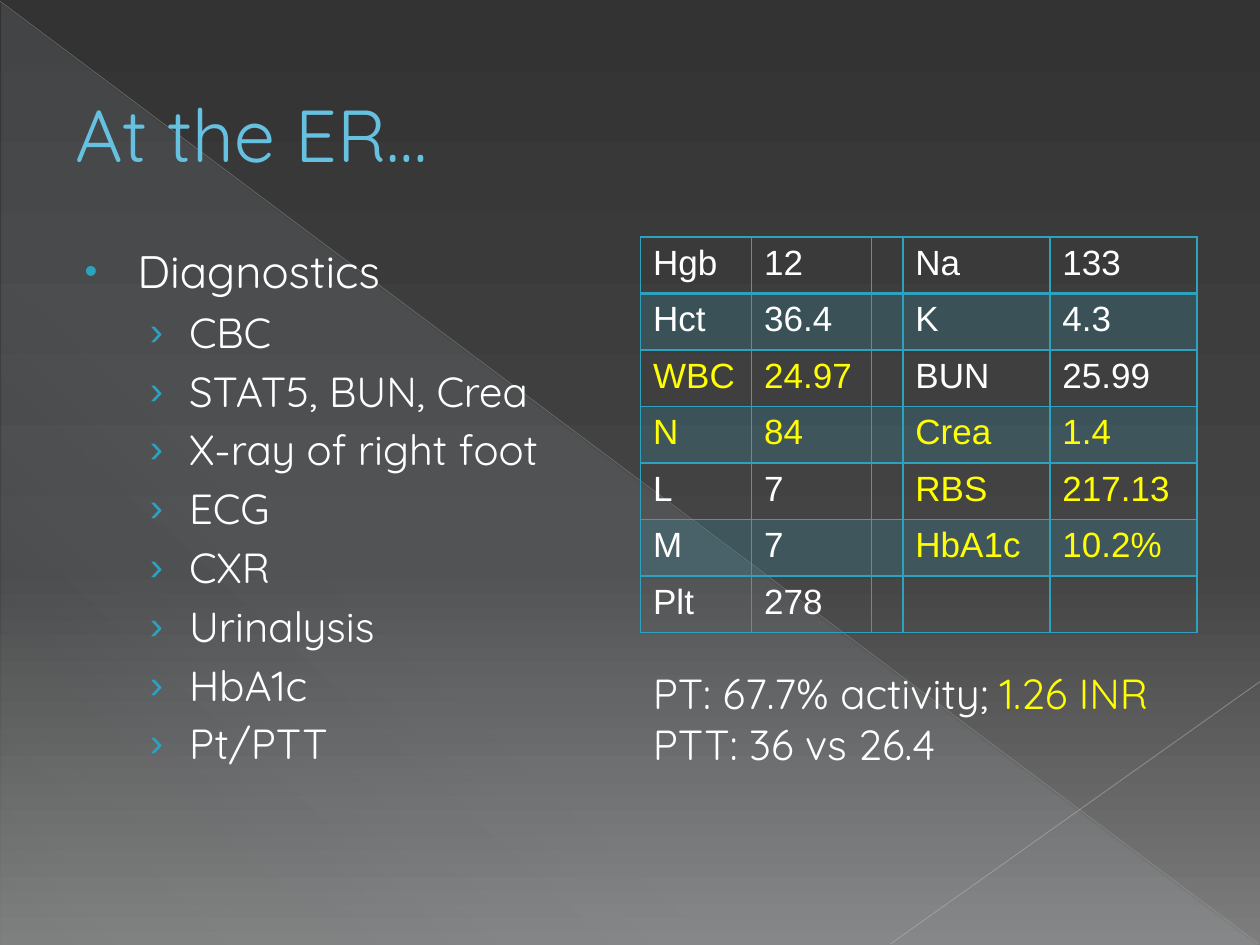
from typing import NamedTuple

from lxml import etree
from pptx import Presentation
from pptx.dml.color import RGBColor
from pptx.enum.shapes import MSO_CONNECTOR, MSO_SHAPE
from pptx.enum.text import MSO_ANCHOR, MSO_AUTO_SIZE, PP_ALIGN
from pptx.oxml.ns import qn
from pptx.util import Pt

STRAIGHT = MSO_CONNECTOR.STRAIGHT
TRIANGLE = MSO_SHAPE.RIGHT_TRIANGLE
MIDDLE, TOP = MSO_ANCHOR.MIDDLE, MSO_ANCHOR.TOP
GROW = MSO_AUTO_SIZE.SHAPE_TO_FIT_TEXT
LEFT = PP_ALIGN.LEFT

FACE = "Quicksand"
WHITE, YELLOW, TEAL, SKY = "FFFFFF", "FFFF00", "2DA2BF", "66C0E0"


class Stop(NamedTuple):
    place: int
    color: str
    alpha: int = 100


class Ray(NamedTuple):
    start: tuple[float, float]
    end: tuple[float, float]
    color: str
    width: float
    alpha: int


class Bullet(NamedTuple):
    mark: str
    left: float
    hang: float
    scale: int
    size: int


RAYS = [
    Ray((0, 0.7), (719.3, 539.3), "B9B9B9", 0.39, 35),
    Ray((720, 389.5), (509, 539.3), "C1C1C1", 0.47, 45),
]
BULLETS = [Bullet("•", 35.3, 30.2, 80, 26), Bullet("›", 64.8, 22.3, 95, 24)]
TESTS = ["CBC", "STAT5, BUN, Crea", "X-ray of right foot", "ECG", "CXR",
         "Urinalysis", "HbA1c", "Pt/PTT"]
WIDTHS = [63.5, 68.4, 18, 84, 84]
ROW = 32.3
LABS = [
    ("Hgb", "12", "", "Na", "133"),
    ("Hct", "36.4", "", "K", "4.3"),
    ("WBC", "24.97", "", "BUN", "25.99"),
    ("N", "84", "", "Crea", "1.4"),
    ("L", "7", "", "RBS", "217.13"),
    ("M", "7", "", "HbA1c", "10.2%"),
    ("Plt", "278", "", "", ""),
]
ALERTS = {"WBC", "24.97", "N", "84", "Crea", "1.4", "RBS", "217.13",
          "HbA1c", "10.2%"}


def rgb(code: str) -> RGBColor:
    return RGBColor.from_string(code)


def add(node, tag: str, **attrs):
    """Append a child element with the given attributes."""
    return etree.SubElement(node, qn(tag), {k: str(v) for k, v in attrs.items()})


def fade(node, alpha: int) -> None:
    """Make the first colour under a node partly transparent."""
    add(next(node.iter(qn("a:srgbClr"))), "a:alpha", val=alpha * 1000)


def shade(fill, node, stops: list[Stop], angle: int) -> None:
    """Give a fill a clockwise linear gradient."""
    fill.gradient()
    group = next(node.iter(qn("a:gsLst")))
    for old in list(group):
        group.remove(old)
    for stop in stops:
        item = add(group, "a:gs", pos=stop.place * 1000)
        add(item, "a:srgbClr", val=stop.color)
        if stop.alpha < 100:
            fade(item, stop.alpha)
    next(node.iter(qn("a:lin"))).set("ang", str(angle * 60000))


def style(font, size: int, color: str, face: str = FACE) -> None:
    font.name, font.size = face, Pt(size)
    font.color.rgb = rgb(color)


def place(shape, left: float, top: float, width: float, height: float) -> None:
    shape.left, shape.top = Pt(left), Pt(top)
    shape.width, shape.height = Pt(width), Pt(height)


def draw_ray(shapes, ray: Ray) -> None:
    line = shapes.add_connector(STRAIGHT, *map(Pt, ray.start + ray.end))
    line.line.color.rgb = rgb(ray.color)
    line.line.width = Pt(ray.width)
    props = line.element.spPr
    fade(props, ray.alpha)
    add(props, "a:effectLst")


def draw_back(slide) -> None:
    shade(slide.background.fill, slide.element,
          [Stop(0, "333333"), Stop(60, "444444"), Stop(100, "7D7D7D")], 90)
    wedge = slide.shapes.add_shape(TRIANGLE, Pt(0.7), Pt(1.4), Pt(718.6), Pt(538.6))
    wedge.shadow.inherit = False
    wedge.line.fill.background()
    shade(wedge.fill, wedge.element,
          [Stop(0, "DEF5FA", 10), Stop(70, "DEF5FA", 8), Stop(100, "DEF5FA", 1)], 133)
    for ray in RAYS:
        draw_ray(slide.shapes, ray)


def fill_item(para, text: str, level: int) -> None:
    bullet = BULLETS[level]
    para.text, para.level = text, level
    props = para._p.get_or_add_pPr()
    props.set("marL", str(Pt(bullet.left)))
    props.set("indent", str(-Pt(bullet.hang)))
    add(add(props, "a:buClr"), "a:srgbClr", val=TEAL)
    add(props, "a:buSzPct", val=bullet.scale * 1000)
    add(props, "a:buChar", char=bullet.mark)
    style(para.font, bullet.size, WHITE)


def edge(cell, side: str, width: float) -> None:
    line = add(cell._tc.get_or_add_tcPr(), f"a:ln{side}", w=Pt(width))
    add(add(line, "a:solidFill"), "a:srgbClr", val=TEAL)


def fill_cell(cell, text: str, row: int) -> None:
    for side in "LRTB":
        thick = (row, side) in ((0, "B"), (1, "T"))
        edge(cell, side, 2 if thick else 1)
    if row % 2:
        cell.fill.solid()
        cell.fill.fore_color.rgb = rgb(TEAL)
        fade(cell._tc.tcPr.find(qn("a:solidFill")), 20)
    else:
        cell.fill.background()
    if text:
        cell.text = text
        color = YELLOW if text in ALERTS else WHITE
        style(cell.text_frame.paragraphs[0].font, 20, color, "Arial")


def draw_labs(shapes) -> None:
    table = shapes.add_table(len(LABS), len(WIDTHS), Pt(366), Pt(135.5),
                             Pt(sum(WIDTHS)), Pt(ROW * len(LABS))).table
    table.first_row = table.horz_banding = False
    for col, width in zip(table.columns, WIDTHS):
        col.width = Pt(width)
    for r, labs in enumerate(LABS):
        table.rows[r].height = Pt(ROW)
        for c, text in enumerate(labs):
            fill_cell(table.cell(r, c), text, r)


def draw_clotting(shapes) -> None:
    frame = shapes.add_textbox(Pt(366), Pt(378), Pt(324), Pt(65.5)).text_frame
    frame.word_wrap, frame.auto_size = True, GROW
    first, last = frame.paragraphs[0], frame.add_paragraph()
    for text, color in (("PT: 67.7% activity; ", WHITE), ("1.26 INR", YELLOW)):
        run = first.add_run()
        run.text = text
        style(run.font, 24, color)
    last.text = "PTT: 36 vs 26.4"
    style(last.font, 24, WHITE)


def main() -> None:
    deck = Presentation()
    deck.slide_width, deck.slide_height = Pt(720), Pt(540)
    slide = deck.slides.add_slide(deck.slide_layouts[1])
    title, body = slide.shapes.title, slide.placeholders[1]
    draw_back(slide)
    for holder in (title, body):  # bring text in front of the backdrop
        holder.element.getparent().append(holder.element)

    place(title, 36, 21, 648, 110)
    title.text_frame.text = "At the ER…"
    title.text_frame.vertical_anchor = MIDDLE
    head = title.text_frame.paragraphs[0]
    head.alignment = LEFT
    style(head.font, 42, SKY)

    place(body, 36, 135.5, 318, 356.5)
    body.text_frame.vertical_anchor = TOP
    fill_item(body.text_frame.paragraphs[0], "Diagnostics", 0)
    for test in TESTS:
        fill_item(body.text_frame.add_paragraph(), test, 1)

    draw_labs(slide.shapes)
    draw_clotting(slide.shapes)
    deck.save("out.pptx")


if __name__ == "__main__":
    main()
